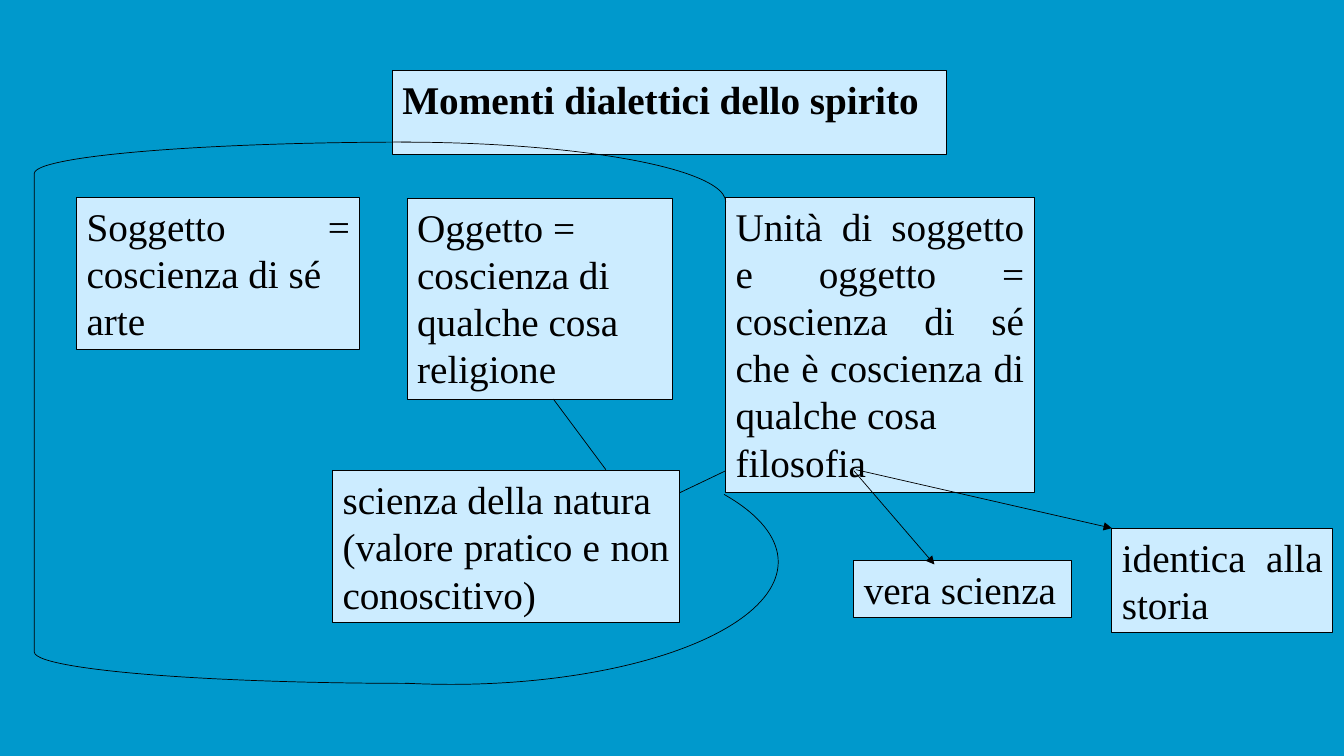
from dataclasses import dataclass

from lxml import etree
from pptx import Presentation
from pptx import util as u
from pptx.dml import color
from pptx.enum import shapes, text
from pptx.oxml import ns

WIDE, HIGH = u.Inches(13.33), u.Inches(7.5)
FONT = "Times New Roman"
BLACK, PALE, BLUE = "000000", "CCECFF", "0099CC"
LEFT, JUST = text.PP_ALIGN.LEFT, text.PP_ALIGN.JUSTIFY
ARC, BRACE = shapes.MSO_SHAPE.ARC, shapes.MSO_SHAPE.LEFT_BRACKET
TOP, ROW, LOW = 18.8, 26.13, 62.27


@dataclass
class Area:
    x: float
    y: float
    w: float
    h: float


@dataclass
class Box:
    area: Area
    words: str
    align: text.PP_ALIGN = JUST


@dataclass
class Link:
    start: tuple[float, float]
    end: tuple[float, float]
    arrow: bool = False


@dataclass
class Curve:
    kind: shapes.MSO_SHAPE
    area: Area
    turns: tuple[float, ...] = ()


HEAD = Box(Area(29.18, 9.33, 41.25, 7.6), "Momenti dialettici dello spirito", LEFT)
BOXES = [
    Box(Area(5.7, ROW, 21.08, 20.13), "Soggetto = coscienza di sé\narte"),
    Box(Area(30.3, 26.27, 19.73, 26.53),
        "Oggetto = coscienza di qualche cosa\nreligione", LEFT),
    Box(Area(54, ROW, 22.95, 39.07),
        "Unità di soggetto e oggetto = coscienza di sé "
        "che è coscienza di qualche cosa\nfilosofia"),
    Box(Area(63.53, 74.13, 16.2, 7.6), "vera scienza", LEFT),
    Box(Area(82.73, 69.87, 16.43, 13.87), "identica alla storia"),
    Box(Area(24.75, LOW, 25.8, 20.13),
        "scienza della natura\n(valore pratico e non conoscitivo)"),
]
LINKS = [
    Link((41.18, 52.8), (45.08, 62.13)),
    Link((54, LOW), (50.55, 65.2)),
    Link((63.53, LOW), (69.53, 74.67), True),
    Link((63.68, 62.13), (82.73, 69.87), True),
]
CURVES = [
    Curve(ARC, Area(5.7, TOP, 48.3, 15.87)),
    Curve(BRACE, Area(2.55, TOP, 28.05, 71.6)),
    Curve(ARC, Area(9.23, 58.13, 48.68, 32.4), (207.67, 66.5)),
]


def across(share: float) -> int:
    return round(WIDE * share / 100)


def down(share: float) -> int:
    return round(HIGH * share / 100)


def place(area: Area) -> tuple[int, int, int, int]:
    return across(area.x), down(area.y), across(area.w), down(area.h)


def paint(form, tint: str) -> None:
    form.solid()
    form.fore_color.rgb = color.RGBColor.from_string(tint)


def stroke(line, width: float) -> None:
    paint(line.fill, BLACK)
    line.width = u.Pt(width)


def write(shape, box: Box, bold: bool = False) -> None:
    shape.left, shape.top, shape.width, shape.height = place(box.area)
    paint(shape.fill, PALE)
    stroke(shape.line, 0.75)
    frame = shape.text_frame
    frame.text = box.words
    frame.word_wrap = True
    frame.auto_size = text.MSO_AUTO_SIZE.SHAPE_TO_FIT_TEXT
    frame.vertical_anchor = text.MSO_ANCHOR.TOP
    for para in frame.paragraphs:
        para.alignment = box.align
        for run in para.runs:
            run.font.name = FONT
            run.font.size = u.Pt(28)
            run.font.bold = bold
            run.font.color.rgb = color.RGBColor.from_string(BLACK)


def join(slide, link: Link) -> None:
    (x, y), (r, b) = link.start, link.end
    line = slide.shapes.add_connector(
        shapes.MSO_CONNECTOR.STRAIGHT, across(x), down(y), across(r), down(b))
    stroke(line.line, 0.5)
    if link.arrow:
        tail = etree.SubElement(line.line._get_or_add_ln(), ns.qn("a:tailEnd"))
        tail.set("type", "triangle")
    etree.SubElement(line._element.spPr, ns.qn("a:effectLst"))


def bend(slide, curve: Curve) -> None:
    shape = slide.shapes.add_shape(curve.kind, *place(curve.area))
    shape.shadow.inherit = False
    shape.fill.background()
    stroke(shape.line, 0.5)
    for i, turn in enumerate(curve.turns):
        shape.adjustments[i] = turn


def main() -> None:
    deck = Presentation()
    deck.slide_width, deck.slide_height = WIDE, HIGH
    slide = deck.slides.add_slide(deck.slide_layouts.get_by_name("Title Only"))
    paint(slide.background.fill, BLUE)
    write(slide.shapes.title, HEAD, bold=True)
    for box in BOXES:
        write(slide.shapes.add_textbox(*place(box.area)), box)
    for link in LINKS:
        join(slide, link)
    for curve in CURVES:
        bend(slide, curve)
    deck.save("out.pptx")


if __name__ == "__main__":
    main()
